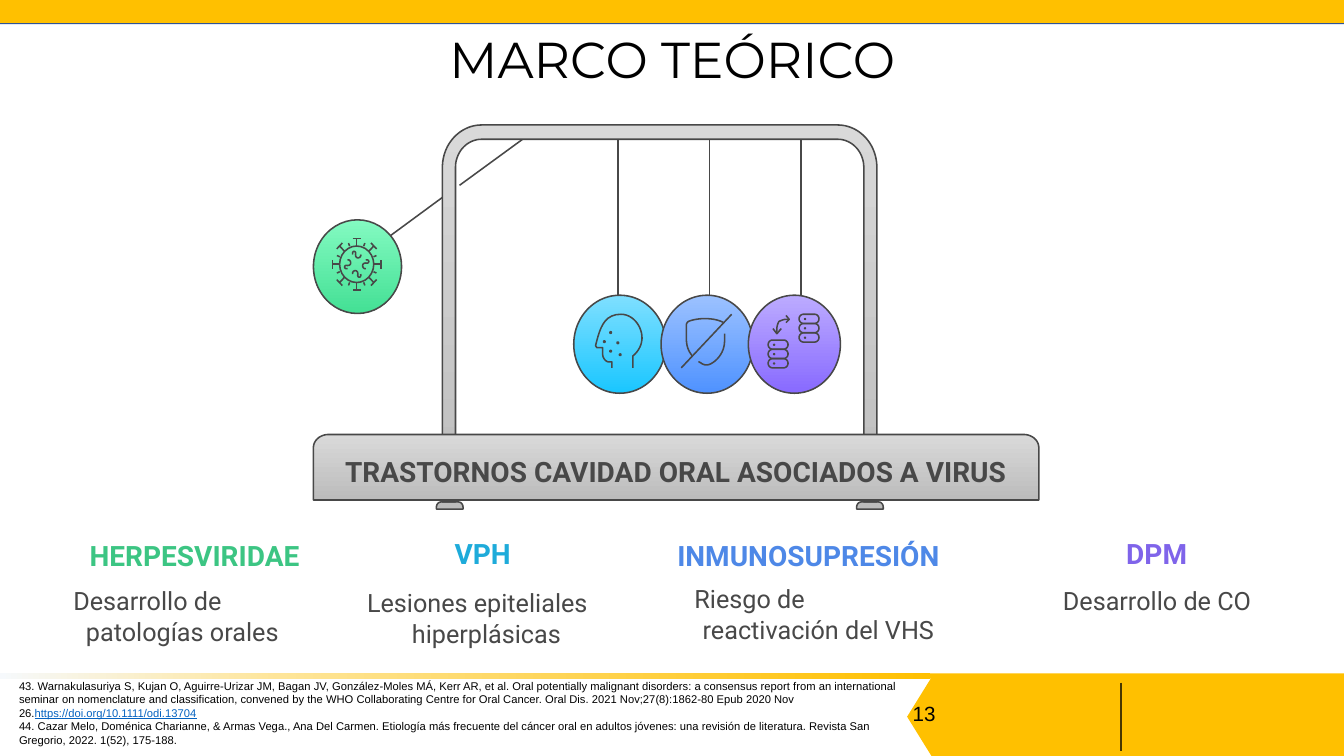
from math import cos, pi, radians, sin

from lxml.etree import SubElement
from pptx import Presentation
from pptx.dml.color import RGBColor
from pptx.enum.shapes import MSO_CONNECTOR, MSO_SHAPE
from pptx.enum.text import MSO_ANCHOR, PP_ALIGN
from pptx.oxml.ns import qn
from pptx.util import Cm, Pt

COLORS = {
    "yellow": "FFC000", "blue": "2F5496", "brown": "483700", "black": "000000",
    "ink": "484848", "link": "0563C1", "green": "3CC583", "cyan": "1EABDA",
    "azure": "4E88E7", "violet": "7F64EA",
}
GRADIENTS = {
    "steel": ((0, "D9D9D9"), (100, "BCBCBC")),
    "fade": ((0, "F6F9FC"), (30, "FEE599"), (100, "FFC000")),
    "green": ((0, "83FAC1"), (100, "44E095")),
    "cyan": ((0, "7FDFFF"), (100, "1AC6FF")),
    "azure": ((0, "9CC2FF"), (100, "4F92FF")),
    "violet": ((0, "BCABFF"), (100, "886AFF")),
}
LEFT, CENTER = PP_ALIGN.LEFT, PP_ALIGN.CENTER
HEADING = {"name": "Roboto", "size": Pt(20), "bold": True}
BODY = {"name": "Roboto", "size": Pt(18)}
SMALL = {"name": "Arial", "size": Pt(8)}


def arc(cx, cy, rx, ry, start=0, end=360, steps=24):
    """Points on an ellipse, clockwise from the right, angles in degrees."""
    angles = [radians(start + (end - start) * i / steps) for i in range(steps + 1)]
    return [(cx + rx * cos(a), cy + ry * sin(a)) for a in angles]


def trace(*nodes, steps=10):
    """A pair is a straight step, six numbers are a cubic curve."""
    pts = [nodes[0]]
    for node in nodes[1:]:
        if len(node) == 2:
            pts.append(node)
            continue
        x0, y0 = pts[-1]
        x1, y1, x2, y2, x3, y3 = node
        for i in range(1, steps + 1):
            t = i / steps
            u = 1 - t
            a, b, c, d = u ** 3, 3 * u * u * t, 3 * u * t * t, t ** 3
            pts.append((a * x0 + b * x1 + c * x2 + d * x3,
                        a * y0 + b * y1 + c * y2 + d * y3))
    return pts


def round_top(x, y, w, h, rx, ry):
    return (arc(x + rx, y + ry, rx, ry, 180, 270) + arc(x + w - rx, y + ry, rx, ry, 270, 360)
            + [(x + w, y + h), (x, y + h), (x, y + ry)])


def pill(x, y, w, h, r):
    mid = y + h / 2
    return (arc(x + r, mid, r, h / 2, 90, 270)
            + arc(x + w - r, mid, r, h / 2, -90, 90) + [(x + r, y + h)])


class Deck:
    def __init__(self):
        self.prs = Presentation()
        self.prs.slide_width, self.prs.slide_height = Cm(33.87), Cm(19.05)
        self.s = self.prs.slides.add_slide(self.prs.slide_layouts[6])

    def paint(self, sp, fill=None, line=None, angle=270):
        sp.shadow.inherit = False
        if fill in GRADIENTS:
            sp.fill.gradient()
            sp.fill.gradient_angle = angle
            gs_lst = sp._element.spPr.find(qn("a:gradFill")).find(qn("a:gsLst"))
            for gs in list(gs_lst):
                gs_lst.remove(gs)
            for pos, color in GRADIENTS[fill]:
                gs = SubElement(gs_lst, qn("a:gs"), pos=str(pos * 1000))
                SubElement(gs, qn("a:srgbClr"), val=color)
        elif fill:
            sp.fill.solid()
            sp.fill.fore_color.rgb = RGBColor.from_string(COLORS[fill])
        else:
            sp.fill.background()
        if line:
            sp.line.color.rgb = RGBColor.from_string(COLORS[line])
            sp.line.width = Pt(1.11)
        else:
            sp.line.fill.background()

    def shape(self, kind, x, y, w, h, fill, line=None, angle=270):
        sp = self.s.shapes.add_shape(kind, Cm(x), Cm(y), Cm(w), Cm(h))
        self.paint(sp, fill, line, angle)
        return sp

    def freeform(self, contours, fill=None, close=False):
        contours = [[(Cm(x), Cm(y)) for x, y in c] for c in contours]
        fb = self.s.shapes.build_freeform(*contours[0][0])
        for i, c in enumerate(contours):
            if i:
                fb.move_to(*c[0])
            fb.add_line_segments(c[1:], close=close)
        self.paint(fb.convert_to_shape(), fill, "ink")

    def line(self, x1, y1, x2, y2, color="ink", width=1.11):
        c = self.s.shapes.add_connector(MSO_CONNECTOR.STRAIGHT, Cm(x1), Cm(y1), Cm(x2), Cm(y2))
        c.line.color.rgb = RGBColor.from_string(COLORS[color])
        c.line.width = Pt(width)
        SubElement(c._element.spPr, qn("a:effectLst"))

    def text(self, x, y, w, h, paras, anchor=MSO_ANCHOR.TOP, margins=(0, 0, 0, 0), spacing=None):
        """Each paragraph is (alignment, runs); each run is (text, color, format)."""
        tf = self.s.shapes.add_textbox(Cm(x), Cm(y), Cm(w), Cm(h)).text_frame
        tf.word_wrap, tf.vertical_anchor = True, anchor
        for side, margin in zip(("left", "top", "right", "bottom"), margins):
            setattr(tf, f"margin_{side}", Cm(margin))
        for i, (align, runs) in enumerate(paras):
            p = tf.add_paragraph() if i else tf.paragraphs[0]
            p.alignment, p.line_spacing = align, spacing
            for content, color, fmt in runs:
                r = p.add_run()
                r.text = content
                for key, value in fmt.items():
                    setattr(r.font, key, value)
                r.font.color.rgb = RGBColor.from_string(COLORS[color])


def main():
    d = Deck()

    # Top and bottom bands
    rect = MSO_SHAPE.RECTANGLE
    tag = d.shape(MSO_SHAPE.PENTAGON, 22.86, 17.07, 11.01, 1.98, "yellow")
    tag.adjustments[0] = 0.31
    tag.rotation = 180
    d.shape(rect, 23.44, 16.97, 10.43, 0.13, "yellow")
    d.shape(rect, 0, 0, 33.87, 0.61, "blue")
    d.shape(rect, 0, 0, 33.87, 0.58, "yellow")
    d.line(28.24, 17.2, 28.24, 18.92, "brown", 1.5)
    d.shape(rect, 0, 16.97, 23.44, 0.13, "fade", angle=0)

    # Title and slide number
    inset = (0.25, 0.13, 0.25, 0.13)
    d.text(2.34, 0.61, 29.21, 1.91,
           [(CENTER, [("MARCO TEÓRICO", "black", {"name": "Montserrat", "size": Pt(36)})])],
           MSO_ANCHOR.MIDDLE, inset, 0.9)
    d.text(22.53, 17.27, 1.52, 1.42,
           [(CENTER, [("13", "black", {"name": "Arial", "size": Pt(14.7)})])],
           MSO_ANCHOR.MIDDLE, inset)

    # Strings
    for i in range(3):
        x = 15.57 + 2.31 * i
        d.line(x, 3.48, x, 7.59)
    d.line(9.32, 6.32, 11.25, 4.9)
    d.line(11.58, 4.67, 13.21, 3.48)

    # Frame with its feet, then the base
    frame = ([(11.15, 12.65)] + arc(12.14, 4.22, 0.99, 1.07, 180, 270)
             + arc(21.11, 4.22, 0.99, 1.07, 270, 360) + [(22.1, 12.65), (21.77, 12.65)]
             + arc(21.11, 4.22, 0.66, 0.71, 360, 270)
             + arc(12.14, 4.22, 0.66, 0.71, 270, 180) + [(11.48, 12.65)])
    feet = [round_top(x, 12.65, 0.67, 0.18, 0.12, 0.13) for x in (11, 21.59)]
    d.freeform([frame] + feet, "steel", True)
    d.freeform([round_top(7.9, 10.95, 18.28, 1.65, 0.38, 0.33)], "steel", True)

    # Balls
    d.shape(MSO_SHAPE.OVAL, 7.9, 5.54, 2.22, 2.36, "green", "ink")
    for i, fill in enumerate(("cyan", "azure", "violet")):
        d.shape(MSO_SHAPE.OVAL, 14.46 + 2.2 * i, 7.44, 2.32, 2.47, fill, "ink")

    # Virus icon
    def around(points, angle, cx=8.99, cy=6.66):
        c, n = cos(angle), sin(angle)
        return [(cx + x * c - y * n, cy + 1.07 * (x * n + y * c)) for x, y in points]

    squiggle = trace((-0.1, -0.23), (-0.13, -0.33, 0, -0.33, -0.03, -0.23),
                     (-0.03, -0.1, 0.13, -0.15, 0.1, -0.23))
    virus = [arc(8.99, 6.66, 0.43, 0.46)]
    for i in range(8):
        a = i * pi / 4
        virus += [around([(0.43, 0), (0.61, 0)], a), around([(0.61, -0.1), (0.61, 0.1)], a),
                  around([(0.46, 0), (0.54, 0)], a + pi / 8)]
    virus += [around(squiggle, i * pi / 2) for i in range(4)]
    d.freeform(virus)

    # Head icon
    head = trace((15.42, 9.27), (15.42, 9.12), (15.34, 9.12),
                 (15.27, 9.12, 15.19, 9.02, 15.19, 8.94), (15.19, 8.76), (15.04, 8.76),
                 (15.01, 8.71), (15.11, 8.33, 15.19, 7.92, 15.65, 7.92),
                 (15.88, 7.92, 16.08, 8.1, 16.15, 8.33),
                 (16.23, 8.56, 16.15, 8.81, 15.95, 8.97), (15.95, 9.27))
    spots = ((15.39, 8.85), (15.57, 8.64), (15.63, 8.94), (15.23, 8.61), (15.39, 8.38))
    d.freeform([head] + [arc(x, y, 0.02, 0.02, steps=8) for x, y in spots])

    # Crossed shield icon
    d.freeform([
        trace((18.26, 8.41), (18.26, 8.61), (18.26, 8.84, 18.11, 9.07, 17.91, 9.17),
              (17.86, 9.19), (17.81, 9.2, 17.78, 9.2, 17.75, 9.19), (17.7, 9.17),
              (17.65, 9.14, 17.63, 9.12, 17.6, 9.12)),
        trace((17.45, 8.97), (17.35, 8.86, 17.3, 8.71, 17.3, 8.56), (17.3, 8.18),
              (17.3, 8.15, 17.32, 8.13, 17.35, 8.1), (17.48, 8.05, 17.63, 8.03, 17.75, 8.03),
              (17.93, 8.03, 18.08, 8.05, 18.24, 8.13)),
        [(18.44, 7.92), (17.17, 9.27)],
    ])

    # Stacks icon
    stacks = [
        trace((19.58, 8.41), (19.58, 8.28), (19.58, 8.2, 19.61, 8.15, 19.63, 8.1),
              (19.69, 8.08, 19.74, 8.05, 19.79, 8.05), (19.89, 8.05)),
        [(19.48, 8.28), (19.58, 8.41), (19.69, 8.28)],
        [(19.81, 8.13), (19.89, 8.05), (19.81, 7.95)],
    ]
    for x, top in ((20.14, 7.92), (19.36, 8.57)):
        for i in range(3):
            y = top + 0.235 * i
            stacks += [pill(x, y, 0.5, 0.23, 0.11), arc(x + 0.15, y + 0.12, 0.01, 0.01, steps=8)]
    d.freeform(stacks)

    # Headings
    for x, y, w, label, color in (
            (7.9, 11.46, 18.26, "TRASTORNOS CAVIDAD ORAL ASOCIADOS A VIRUS", "ink"),
            (1.22, 13.56, 7.37, "HERPESVIRIDAE", "green"),
            (11.3, 13.51, 1.73, "VPH", "cyan"),
            (15.93, 13.56, 8.89, "INMUNOSUPRESIÓN", "azure"),
            (28.17, 13.51, 1.96, "DPM", "violet")):
        d.text(x, y, w, 0.86, [(CENTER, [(label, color, HEADING)])])

    # Descriptions
    for x, y, w, lines in (
            (1.85, 14.76, 5.49, ((LEFT, "Desarrollo de"), (CENTER, "patologías orales"))),
            (9.25, 14.81, 6.02, ((LEFT, "Lesiones epiteliales"), (CENTER, "hiperplásicas"))),
            (17.5, 14.71, 6.25, ((LEFT, "Riesgo de"), (CENTER, "reactivación del VHS"))),
            (26.01, 14.76, 6.3, ((CENTER, "Desarrollo de CO"),))):
        d.text(x, y, w, 0.77 * len(lines), [(al, [(t, "ink", BODY)]) for al, t in lines])

    # References
    d.text(0, 16.99, 23.24, 1.96, [
        (LEFT, [("43. Warnakulasuriya S, Kujan O, Aguirre-Urizar JM, Bagan JV, González-Moles MÁ, "
                 "Kerr AR, et al. Oral potentially malignant disorders: a consensus report from an "
                 "international seminar on nomenclature and classification, convened by the WHO "
                 "Collaborating Centre for Oral Cancer. Oral Dis. 2021 Nov;27(8):1862-80 Epub 2020 "
                 "Nov 26.", "black", SMALL),
                ("https://doi.org/10.1111/odi.13704", "link", {**SMALL, "underline": True})]),
        (LEFT, [("44. Cazar Melo, Doménica Charianne, & Armas Vega., Ana Del Carmen. Etiología más "
                 "frecuente del cáncer oral en adultos jóvenes: una revisión de literatura. Revista "
                 "San Gregorio, 2022. 1(52), 175-188.", "black", SMALL)]),
    ], margins=(0.48, 0.13, 0.25, 0.13))

    d.prs.save("out.pptx")


if __name__ == "__main__":
    main()
